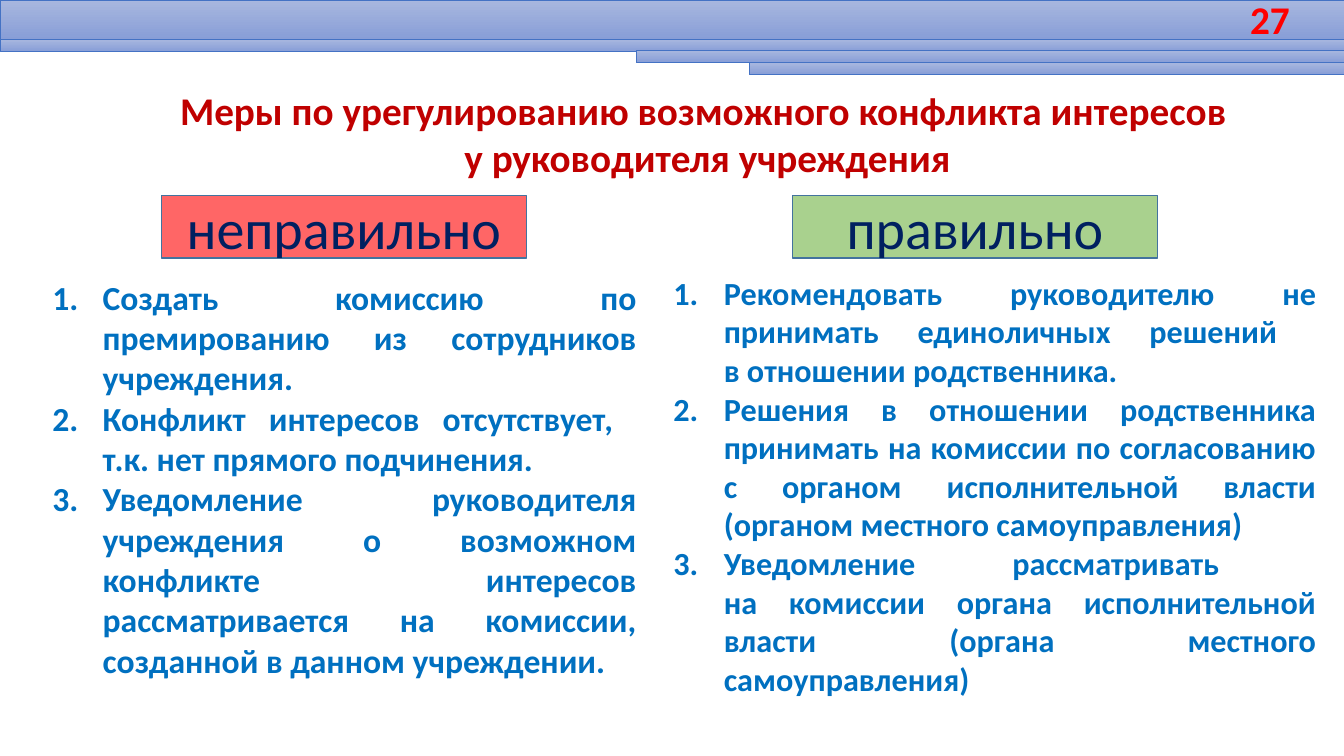
from lxml import etree
from pptx import Presentation
from pptx.dml.color import RGBColor
from pptx.enum import shapes, text
from pptx.oxml import ns
from pptx.util import Inches, Pt

# Content
SLIDE_W, SLIDE_H = 13.33, 7.5
PAGE_NUMBER = "27"
TITLE = "Меры по урегулированию возможного конфликта интересов \nу руководителя учреждения"
BARS = [(0, 0, 0.39), (0, 0.39, 0.12), (6.31, 0.5, 0.12), (7.43, 0.62, 0.12)]  # left, top, height
COLUMNS = [
    {
        "heading": "неправильно", "heading_left": 1.6, "fill": "FF0000", "opacity": 60,
        "box": (0.42, 2.7, 5.99, 4.09), "size": 24,
        "measures": [
            "Создать комиссию по премированию из сотрудников учреждения.",
            "Конфликт интересов отсутствует, \nт.к. нет прямого подчинения.",
            "Уведомление руководителя учреждения о возможном конфликте интересов "
            "рассматривается на комиссии, созданной в данном учреждении.",
        ],
    },
    {
        "heading": "правильно", "heading_left": 7.86, "fill": "A9D18E", "opacity": 100,
        "box": (6.58, 2.52, 6.58, 4.59), "size": 23,
        "measures": [
            "Рекомендовать руководителю не принимать единоличных решений \n"
            "в отношении родственника.",
            "Решения в отношении родственника принимать на комиссии по согласованию "
            "с органом исполнительной власти (органом местного самоуправления)",
            "Уведомление рассматривать \nна комиссии органа исполнительной власти "
            "(органа местного самоуправления)",
        ],
    },
]
ALIGN, ANCHOR = text.PP_ALIGN, text.MSO_ANCHOR


def rgb(hex_color):
    return RGBColor.from_string(hex_color)


def add_rect(left, top, width, height, line_color, line_width):
    rect = slide.shapes.add_shape(shapes.MSO_SHAPE.RECTANGLE, *map(Inches, (left, top, width, height)))
    rect.shadow.inherit = False
    rect.line.color.rgb = rgb(line_color)
    rect.line.width = Pt(line_width)
    return rect


def add_box(box, anchor=ANCHOR.MIDDLE):
    frame = slide.shapes.add_textbox(*map(Inches, box)).text_frame
    frame.word_wrap = True
    frame.vertical_anchor = anchor
    return frame


def write(paragraph, words, size, color, align, bold=True):
    paragraph.alignment = align
    for i, line in enumerate(words.split("\n")):
        if i:
            paragraph.add_line_break()
        run = paragraph.add_run()
        run.text = line
        run.font.name = "Calibri"
        run.font.size = Pt(size)
        run.font.bold = bold
        run.font.color.rgb = rgb(color)


def number(paragraph):
    props = paragraph._p.get_or_add_pPr()
    props.set("marL", str(Inches(0.5)))
    props.set("indent", str(-Inches(0.5)))
    etree.SubElement(props, ns.qn("a:buFont"), typeface="+mj-lt")
    etree.SubElement(props, ns.qn("a:buAutoNum"), type="arabicPeriod")


def set_opacity(shape, percent):
    color = shape._element.spPr.find(ns.qn("a:solidFill"))[0]
    etree.SubElement(color, ns.qn("a:alpha"), val=str(percent * 1000))


prs = Presentation()
prs.slide_width, prs.slide_height = Inches(SLIDE_W), Inches(SLIDE_H)
slide = prs.slides.add_slide(prs.slide_layouts[6])

# Header bars, each running to the right edge
for left, top, height in BARS:
    bar = add_rect(left, top, SLIDE_W - left, height, "4472C4", 0.5)
    bar.fill.gradient()
    bar.fill.gradient_angle = 270
    for stop, shade in zip(bar.fill.gradient_stops, ("A8B7DF", "889ED7")):
        stop.color.rgb = rgb(shade)

# Page number and title
write(add_box((12, 0, 0.89, 0.38)).paragraphs[0], PAGE_NUMBER, 28, "FF0000", ALIGN.RIGHT)
write(add_box((0.95, 0.81, 12.13, 1.04), ANCHOR.TOP).paragraphs[0], TITLE, 28, "C00000", ALIGN.CENTER)

# Two columns: numbered measures under a coloured heading
for column in COLUMNS:
    measures = add_box(column["box"])
    for i, measure in enumerate(column["measures"]):
        item = measures.add_paragraph() if i else measures.paragraphs[0]
        write(item, measure, column["size"], "0070C0", ALIGN.JUSTIFY)
        number(item)

    heading = add_rect(column["heading_left"], 1.94, 3.62, 0.62, "43739E", 1)
    heading.fill.solid()
    heading.fill.fore_color.rgb = rgb(column["fill"])
    if column["opacity"] < 100:
        set_opacity(heading, column["opacity"])
    heading.text_frame.vertical_anchor = ANCHOR.MIDDLE
    write(heading.text_frame.paragraphs[0], column["heading"], 40, "002060", ALIGN.CENTER, bold=False)

prs.save("out.pptx")
